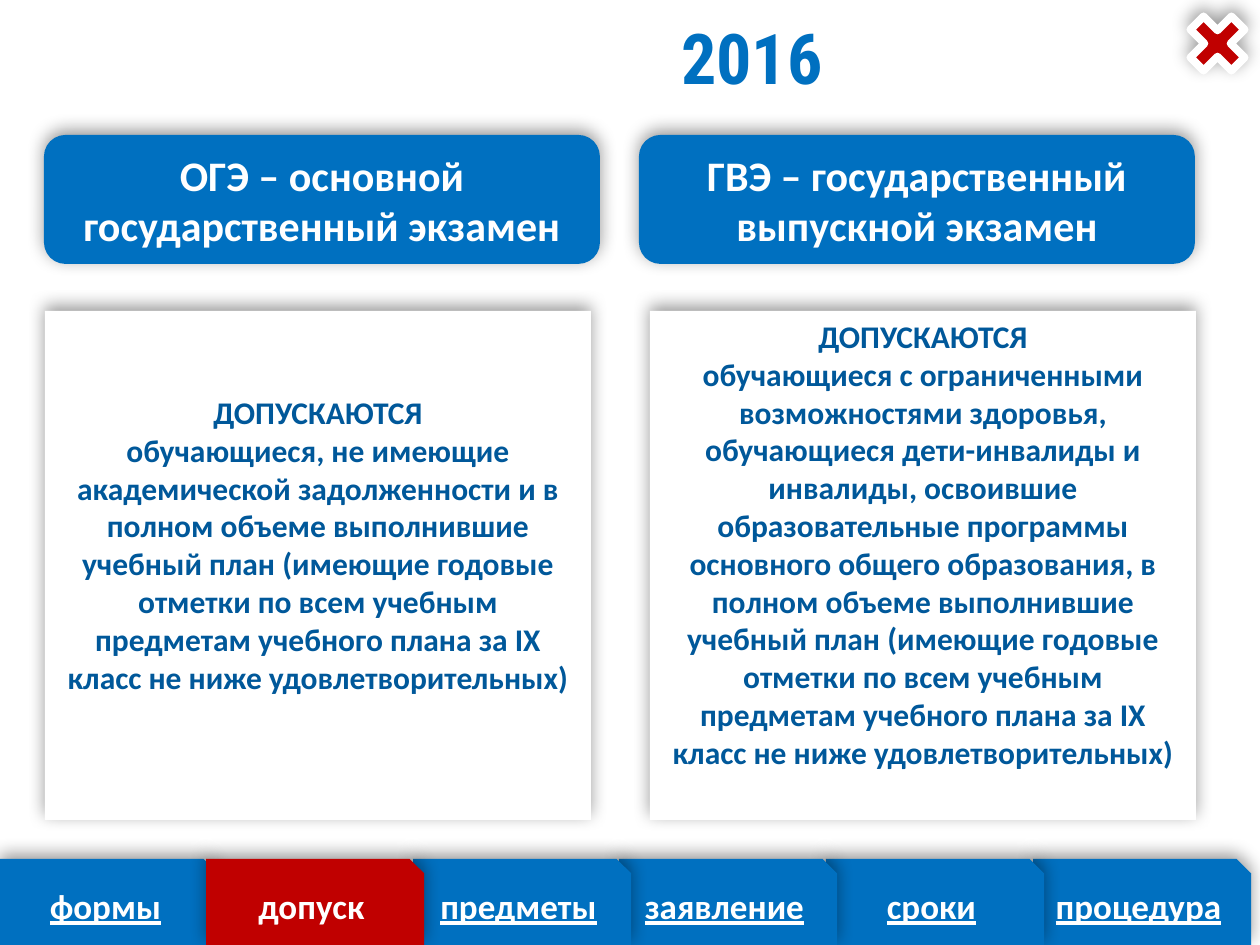
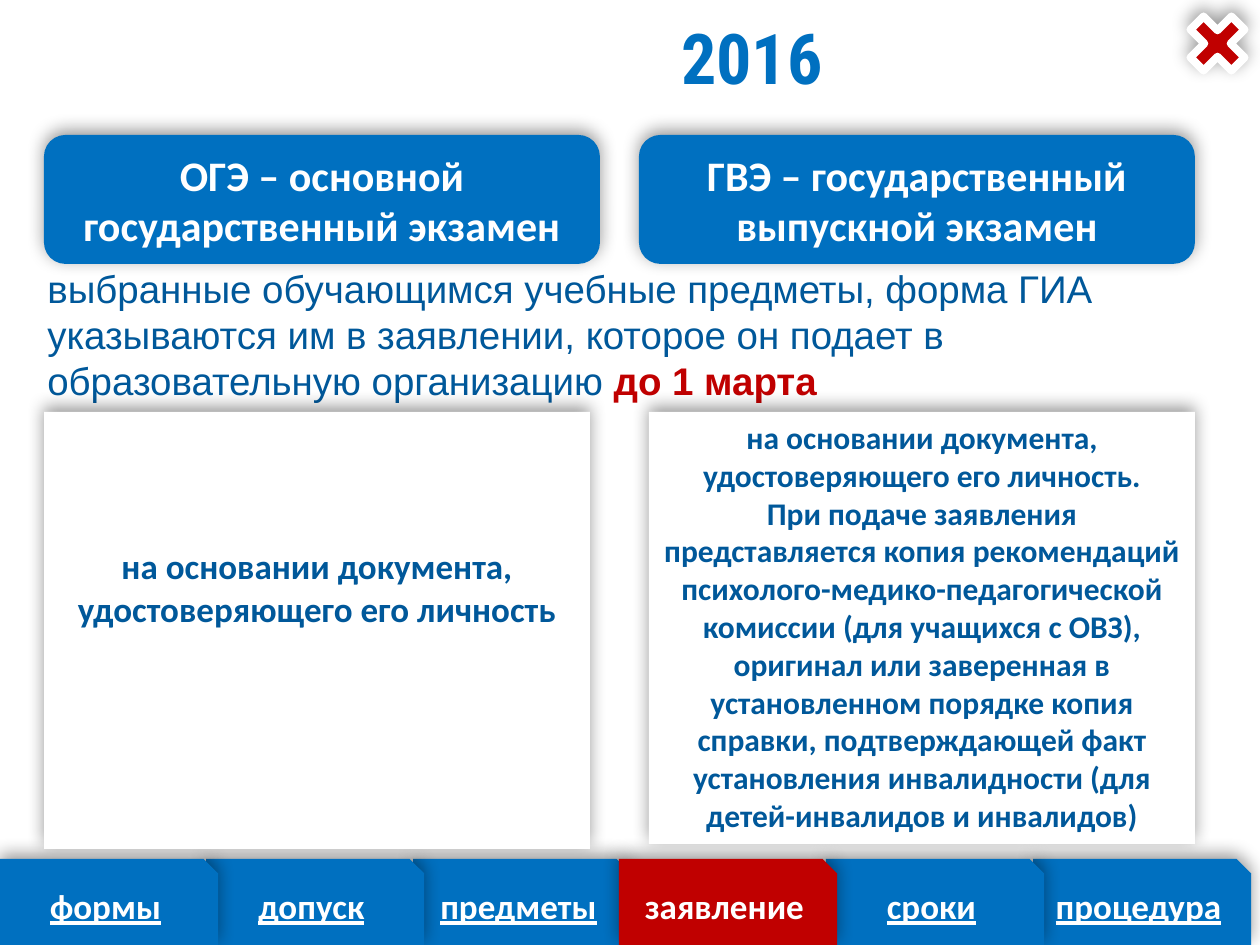
from dataclasses import dataclass

import pptx
import pptx.dml.color
import pptx.enum.shapes
import pptx.enum.text
import pptx.oxml
import pptx.oxml.ns
import pptx.util

RGBColor = pptx.dml.color.RGBColor
MSO_SHAPE = pptx.enum.shapes.MSO_SHAPE
ANCHOR = pptx.enum.text.MSO_ANCHOR
ALIGN = pptx.enum.text.PP_ALIGN

BLUE = RGBColor(0x00, 0x70, 0xC0)
DARK_BLUE = RGBColor(0x00, 0x58, 0x9A)
RED = RGBColor(0xC0, 0x00, 0x00)
WHITE = RGBColor(0xFF, 0xFF, 0xFF)

PX_PER_INCH = 126
TITLE_ONLY_LAYOUT = 5
TABS = ("формы", "допуск", "предметы", "заявление", "сроки", "процедура")
LAST_TAB_LEFT = 1033


@dataclass(frozen=True)
class Box:
    left: int
    top: int
    width: int
    height: int

    def emu(self) -> tuple[int, ...]:
        return tuple(px(v) for v in (self.left, self.top, self.width, self.height))


@dataclass(frozen=True)
class TextStyle:
    size: int
    color: RGBColor
    bold: bool = True
    underline: bool = False
    name: str = "Calibri"


@dataclass(frozen=True)
class Panel:
    box: Box
    lines: tuple[str, ...]
    size: int = 18
    inset_top: int = 6


@dataclass(frozen=True)
class ExamSlide:
    active_tab: str
    panels: tuple[Panel, ...]
    notice: str = ""
    deadline: str = ""


TITLE_BOX = Box(593, 8, 318, 97)
CLOSE_BOX = Box(1178, 4, 79, 79)
NOTICE_BOX = Box(35, 258, 1225, 152)
HEADINGS = (
    (Box(44, 135, 556, 129), "ОГЭ – основной государственный экзамен"),
    (Box(639, 135, 556, 129), "ГВЭ – государственный выпускной экзамен"),
)

SLIDES = (
    ExamSlide("допуск", (
        Panel(Box(45, 311, 546, 509), (
            "ДОПУСКАЮТСЯ\vобучающиеся, не имеющие академической задолженности и в "
            "полном объеме выполнившие учебный план (имеющие годовые отметки по всем "
            "учебным предметам учебного плана за IX класс не ниже удовлетворительных)",
        ), inset_top=82),
        Panel(Box(650, 311, 546, 509), (
            "ДОПУСКАЮТСЯ",
            "обучающиеся с ограниченными возможностями здоровья, обучающиеся "
            "дети-инвалиды и инвалиды, освоившие образовательные программы основного "
            "общего образования, в полном объеме выполнившие учебный план (имеющие "
            "годовые отметки по всем учебным предметам учебного плана за IX класс "
            "не ниже удовлетворительных)",
        )),
    )),
    ExamSlide("заявление", (
        Panel(Box(44, 412, 546, 437), (
            "на основании документа, удостоверяющего его личность",
        ), size=20, inset_top=133),
        Panel(Box(649, 412, 546, 432), (
            "на основании документа, удостоверяющего его личность.",
            "При подаче заявления представляется копия рекомендаций "
            "психолого-медико-педагогической комиссии (для учащихся с ОВЗ), оригинал "
            "или заверенная в установленном порядке копия справки, подтверждающей "
            "факт установления инвалидности (для детей-инвалидов и инвалидов)",
        )),
    ),
        notice="выбранные обучающимся учебные предметы, форма ГИА указываются им в "
               "заявлении, которое он подает в образовательную организацию ",
        deadline="до 1 марта"),
)


def px(value: int) -> int:
    return round(value * pptx.util.Inches(1) / PX_PER_INCH)


def add_shadow(shape, vertical_scale: int) -> None:
    """Cast a soft shadow upwards, stretched to vertical_scale percent."""
    shape.shadow.inherit = False
    effects = shape._element.spPr.find(pptx.oxml.ns.qn("a:effectLst"))
    effects.append(pptx.oxml.parse_xml(
        f'<a:outerShdw {pptx.oxml.ns.nsdecls("a")} blurRad="{pptx.util.Pt(10)}" '
        f'dist="{pptx.util.Pt(3)}" dir="16200000" sy="{vertical_scale * 1000}" '
        'algn="b" rotWithShape="0"><a:srgbClr val="000000">'
        '<a:alpha val="40000"/></a:srgbClr></a:outerShdw>'))


def style_font(font, style: TextStyle) -> None:
    font.name = style.name
    font.size = pptx.util.Pt(style.size)
    font.bold = style.bold
    font.underline = style.underline
    font.color.rgb = style.color


def write_lines(frame, lines: tuple[str, ...], style: TextStyle, anchor) -> None:
    frame.word_wrap = True
    frame.auto_size = pptx.enum.text.MSO_AUTO_SIZE.NONE
    frame.vertical_anchor = anchor
    frame.text = "\n".join(lines)
    for paragraph in frame.paragraphs:
        paragraph.alignment = ALIGN.CENTER
        style_font(paragraph.font, style)


def add_block(slide, kind, box: Box, fill: RGBColor, vertical_scale: int = 100):
    shape = slide.shapes.add_shape(kind, *box.emu())
    shape.fill.solid()
    shape.fill.fore_color.rgb = fill
    shape.line.fill.background()
    add_shadow(shape, vertical_scale)
    return shape


def add_title(slide) -> None:
    title = slide.shapes.title
    title.left, title.top, title.width, title.height = TITLE_BOX.emu()
    write_lines(title.text_frame, ("2016",),
                TextStyle(40, BLUE, name="Roboto Condensed"), ANCHOR.TOP)


def add_tabs(slide, active_tab: str) -> None:
    """Overlap the tabs from right to left, with the active one in front."""
    order = sorted(reversed(TABS), key=lambda name: name == active_tab)
    for name in order:
        active = name == active_tab
        left = LAST_TAB_LEFT * TABS.index(name) // (len(TABS) - 1)
        tab = add_block(slide, MSO_SHAPE.SNIP_1_RECTANGLE, Box(left, 859, 218, 86),
                        RED if active else BLUE)
        write_lines(tab.text_frame, (name,),
                    TextStyle(20, WHITE, underline=not active), ANCHOR.MIDDLE)


def add_close_mark(slide) -> None:
    mark = add_block(slide, MSO_SHAPE.MATH_MULTIPLY, CLOSE_BOX, RED)
    mark.line.color.rgb = WHITE
    mark.line.width = pptx.util.Pt(4.5)


def add_notice(slide, notice: str, deadline: str) -> None:
    frame = slide.shapes.add_textbox(*NOTICE_BOX.emu()).text_frame
    frame.word_wrap = True
    frame.vertical_anchor = ANCHOR.MIDDLE
    for text, color, bold in ((notice, DARK_BLUE, False), (deadline, RED, True)):
        run = frame.paragraphs[0].add_run()
        run.text = text
        style_font(run.font, TextStyle(22, color, bold, name="Arial"))


def add_panel(slide, panel: Panel) -> None:
    shape = add_block(slide, MSO_SHAPE.RECTANGLE, panel.box, WHITE, vertical_scale=104)
    shape.text_frame.margin_top = px(panel.inset_top)
    write_lines(shape.text_frame, panel.lines,
                TextStyle(panel.size, DARK_BLUE), ANCHOR.TOP)


def add_exam_slide(presentation, content: ExamSlide) -> None:
    layout = presentation.slide_layouts[TITLE_ONLY_LAYOUT]
    slide = presentation.slides.add_slide(layout)
    add_title(slide)
    add_tabs(slide, content.active_tab)
    add_close_mark(slide)
    if content.notice:
        add_notice(slide, content.notice, content.deadline)
    for box, text in HEADINGS:
        heading = add_block(slide, MSO_SHAPE.ROUNDED_RECTANGLE, box, BLUE)
        write_lines(heading.text_frame, (text,), TextStyle(24, WHITE), ANCHOR.MIDDLE)
    for panel in content.panels:
        add_panel(slide, panel)


def main() -> None:
    presentation = pptx.Presentation()
    presentation.slide_width = pptx.util.Inches(10)
    presentation.slide_height = pptx.util.Inches(7.5)
    for content in SLIDES:
        add_exam_slide(presentation, content)
    presentation.save("out.pptx")


if __name__ == "__main__":
    main()
